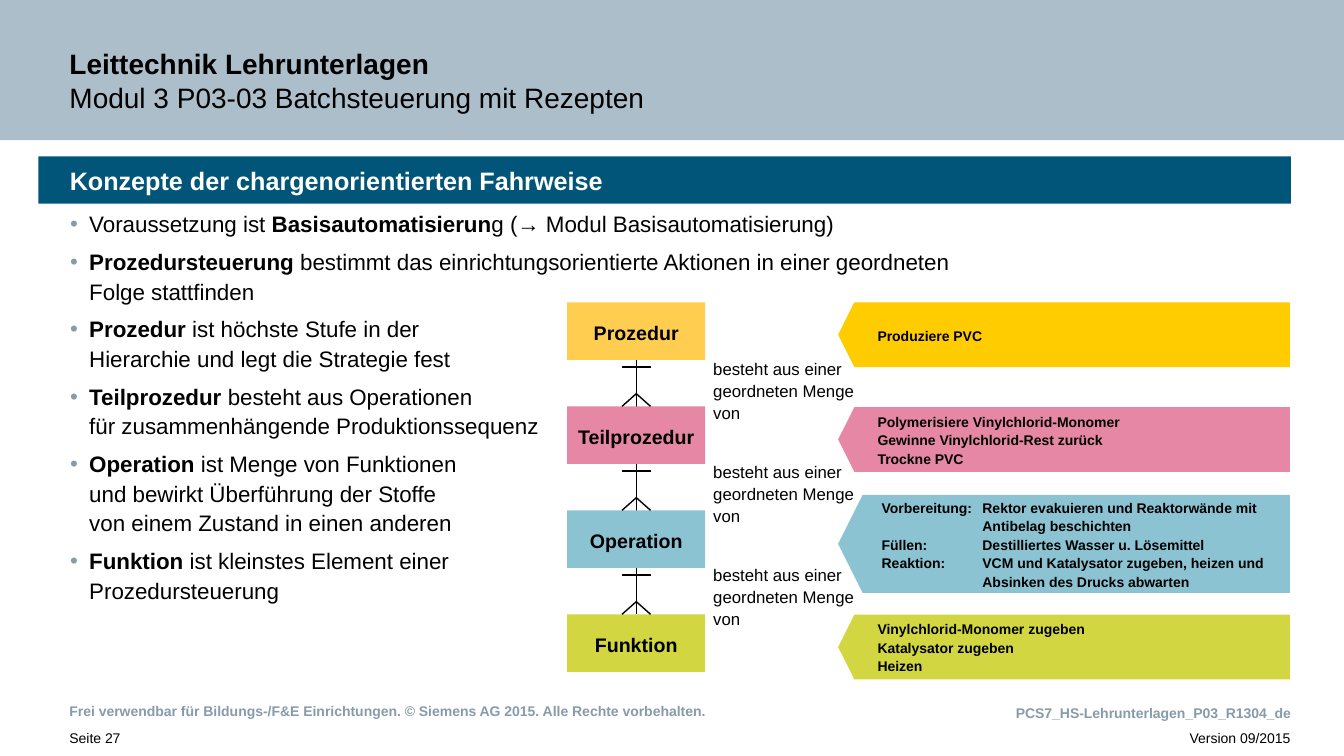
from lxml.etree import SubElement
from pptx import Presentation
from pptx.dml.color import RGBColor
from pptx.enum.shapes import MSO_CONNECTOR, MSO_SHAPE
from pptx.enum.text import MSO_ANCHOR, MSO_AUTO_SIZE, PP_ALIGN
from pptx.oxml.ns import qn
from pptx.util import Cm, Pt

BLACK, WHITE, GREY = "000000", "FFFFFF", "879BAA"
LEFT_MARGIN = 1.75
SLIDE_WIDTH = 33.88

BULLETS = [
    "Voraussetzung ist **Basisautomatisierun**g (→ Modul Basisautomatisierung)",
    "**Prozedursteuerung** bestimmt das einrichtungsorientierte Aktionen in einer "
    "geordneten Folge stattfinden",
    "**Prozedur** ist höchste Stufe in der\nHierarchie und legt die Strategie fest",
    "**Teilprozedur** besteht aus Operationen\nfür zusammenhängende Produktionssequenz",
    "**Operation** ist Menge von Funktionen\nund bewirkt Überführung der Stoffe\n"
    "von einem Zustand in einen anderen",
    "**Funktion** ist kleinstes Element einer\nProzedursteuerung",
]

# Level name, box colour, example colour, example top, example height, example text
LEVELS = [
    ("Prozedur", "FFCD50", "FFCC00", 7.62, 1.63, ["Produziere PVC"]),
    ("Teilprozedur", "E687A5", "E687A5", 10.26, 1.63,
     ["Polymerisiere Vinylchlorid-Monomer",
      "Gewinne Vinylchlorid-Rest zurück\nTrockne PVC"]),
    ("Operation", "8CC3D2", "8CC3D2", 12.47, 2.47,
     ["Vorbereitung:\tRektor evakuieren und Reaktorwände mit\n\tAntibelag beschichten",
      "Füllen:\tDestilliertes Wasser u. Lösemittel",
      "Reaktion:\tVCM und Katalysator zugeben, heizen und\n\tAbsinken des Drucks abwarten"]),
    ("Funktion", "D2D741", "D2D741", 15.49, 1.63,
     ["Vinylchlorid-Monomer zugeben", "Katalysator zugeben\nHeizen"]),
]

# Hierarchy column
BOX_LEFT, BOX_TOP, BOX_WIDTH, BOX_HEIGHT, BOX_STEP = 14.3, 7.62, 3.48, 1.45, 2.62
CENTER = BOX_LEFT + BOX_WIDTH / 2


def color(value):
    return RGBColor.from_string(value)


def format_paragraph(paragraph, bullet, tab):
    """Add the bullet or tab stop that a paragraph needs."""
    properties = paragraph._p.get_or_add_pPr()
    if bullet:
        properties.set("marL", str(Cm(0.5)))
        properties.set("indent", str(-Cm(0.48)))
        bullet_color = SubElement(properties, qn("a:buClr"))
        SubElement(bullet_color, qn("a:srgbClr"), val=GREY)
        SubElement(properties, qn("a:buFont"), typeface="Arial")
        SubElement(properties, qn("a:buChar"), char="•")
    if tab:
        tabs = SubElement(properties, qn("a:tabLst"))
        SubElement(tabs, qn("a:tab"), pos=str(Cm(tab)), algn="l")


def write_text(shape, paragraphs, size=10, font_color=BLACK, bold=False,
               align=PP_ALIGN.LEFT, anchor=MSO_ANCHOR.TOP, insets=(0, 0, 0, 0),
               spacing=1.1, before=0, bullet=False, tab=None, wrap=True):
    """Write paragraphs; ** switches bold and a newline breaks the line."""
    frame = shape.text_frame
    frame.auto_size = MSO_AUTO_SIZE.NONE
    frame.word_wrap = wrap
    frame.vertical_anchor = anchor
    (frame.margin_left, frame.margin_top,
     frame.margin_right, frame.margin_bottom) = map(Cm, insets)
    for index, text in enumerate(paragraphs):
        paragraph = frame.add_paragraph() if index else frame.paragraphs[0]
        paragraph.alignment = align
        paragraph.line_spacing = spacing
        paragraph.space_before = Pt(before if index else 0)
        format_paragraph(paragraph, bullet, tab)
        for part_index, part in enumerate(text.split("**")):
            for line_index, line in enumerate(part.split("\n")):
                if line_index:
                    paragraph.add_line_break()
                    SubElement(paragraph._p[-1], qn("a:rPr"), sz=str(size * 100))
                if line:
                    run = paragraph.add_run()
                    run.text = line
                    run.font.name = "Arial"
                    run.font.size = Pt(size)
                    run.font.bold = bold or part_index % 2 == 1
                    run.font.color.rgb = color(font_color)


def add_text(slide, left, top, width, height, paragraphs, **text_format):
    box = slide.shapes.add_textbox(Cm(left), Cm(top), Cm(width), Cm(height))
    write_text(box, paragraphs, **text_format)


def add_box(slide, left, top, width, height, fill, paragraphs,
            kind=MSO_SHAPE.RECTANGLE, **text_format):
    shape = slide.shapes.add_shape(kind, Cm(left), Cm(top), Cm(width), Cm(height))
    shape.shadow.inherit = False
    shape.fill.solid()
    shape.fill.fore_color.rgb = color(fill)
    shape.line.fill.background()
    write_text(shape, paragraphs, bold=True, anchor=MSO_ANCHOR.MIDDLE, **text_format)
    return shape


def add_line(slide, x1, y1, x2, y2):
    line = slide.shapes.add_connector(
        MSO_CONNECTOR.STRAIGHT, Cm(x1), Cm(y1), Cm(x2), Cm(y2))
    line.line.color.rgb = color(BLACK)
    line.line.width = Pt(1)
    SubElement(line._element.spPr, qn("a:effectLst"))


def add_relation(slide, top, bottom):
    """Draw the one-to-many marks between two levels."""
    add_line(slide, CENTER - 0.36, top + 0.18, CENTER + 0.36, top + 0.18)
    for side in (-0.36, 0.36):
        add_line(slide, CENTER + side, bottom, CENTER, bottom - 0.32)


def add_example(slide, top, height, fill, paragraphs):
    """Draw a pentagon that points left."""
    has_tabs = any("\t" in text for text in paragraphs)
    shape = add_box(slide, 21.13, top, 11.39, height, fill, paragraphs,
                    kind=MSO_SHAPE.PENTAGON, insets=(0.79, 0.15, 0.3, 0.15),
                    tab=2.54 if has_tabs else None)
    shape.adjustments[0] = 0.25
    shape._element.spPr.find(qn("a:xfrm")).set("flipH", "1")


def add_title(slide):
    title = slide.shapes.title
    title.left, title.top = Cm(0), Cm(0)
    title.width, title.height = Cm(SLIDE_WIDTH), Cm(3.53)
    title.fill.solid()
    title.fill.fore_color.rgb = color("ADBECB")
    write_text(title, ["**Leittechnik Lehrunterlagen**\nModul 3 P03-03 Batchsteuerung mit Rezepten"],
               size=20, anchor=MSO_ANCHOR.BOTTOM, insets=(LEFT_MARGIN, 1.09, 5.89, 0.66),
               spacing=1.0)


def add_footer(slide):
    add_text(slide, 0, 17.12, SLIDE_WIDTH, 1.19,
             ["Frei verwendbar für Bildungs-/F&E Einrichtungen. "
              "© Siemens AG 2015. Alle Rechte vorbehalten."],
             font_color=GREY, bold=True, anchor=MSO_ANCHOR.MIDDLE, spacing=1.0,
             insets=(LEFT_MARGIN, 0.41, 8.92, 0))
    add_text(slide, 0, 18.34, 4.9, 0.71, ["Seite 27"], insets=(LEFT_MARGIN, 0, 0, 0.33))
    add_text(slide, 10.52, 18.34, 23.36, 0.71, ["Version 09/2015"],
             align=PP_ALIGN.RIGHT, insets=(0, 0, 1.35, 0.33))
    add_text(slide, 25.55, 17.7, 6.99, 0.43, ["PCS7_HS-Lehrunterlagen_P03_R1304_de"],
             font_color=GREY, bold=True, align=PP_ALIGN.RIGHT, wrap=False)


def add_hierarchy(slide):
    tops = [BOX_TOP + BOX_STEP * index for index in range(len(LEVELS))]
    add_line(slide, CENTER, tops[0] + BOX_HEIGHT, CENTER, tops[-1])
    for index, (name, fill, example_fill, top, height, example) in enumerate(LEVELS):
        add_box(slide, BOX_LEFT, tops[index], BOX_WIDTH, BOX_HEIGHT, fill, [name],
                size=14, align=PP_ALIGN.CENTER, insets=(0, 0.15, 0, 0.15))
        if index:
            add_relation(slide, tops[index - 1] + BOX_HEIGHT, tops[index])
            add_text(slide, 17.98, 8.99 + 2.59 * (index - 1), 3.68, 1.7,
                     ["besteht aus einer\ngeordneten Menge\nvon"], size=12, wrap=False)
        add_example(slide, top, height, example_fill, example)


def main():
    presentation = Presentation()
    presentation.slide_width, presentation.slide_height = Cm(SLIDE_WIDTH), Cm(19.05)
    slide = presentation.slides.add_slide(presentation.slide_layouts[5])
    add_title(slide)
    add_footer(slide)
    # Topic banner and bullet list
    add_box(slide, 0.97, 3.94, 31.57, 1.19, "005578",
            ["Konzepte der chargenorientierten Fahrweise"],
            size=18, font_color=WHITE, spacing=1.0, insets=(0.79, 0, 0.2, 0))
    add_text(slide, LEFT_MARGIN, 5.23, 22.81, 11.89, BULLETS,
             size=16, before=6, bullet=True)
    add_hierarchy(slide)
    presentation.save("out.pptx")


if __name__ == "__main__":
    main()
